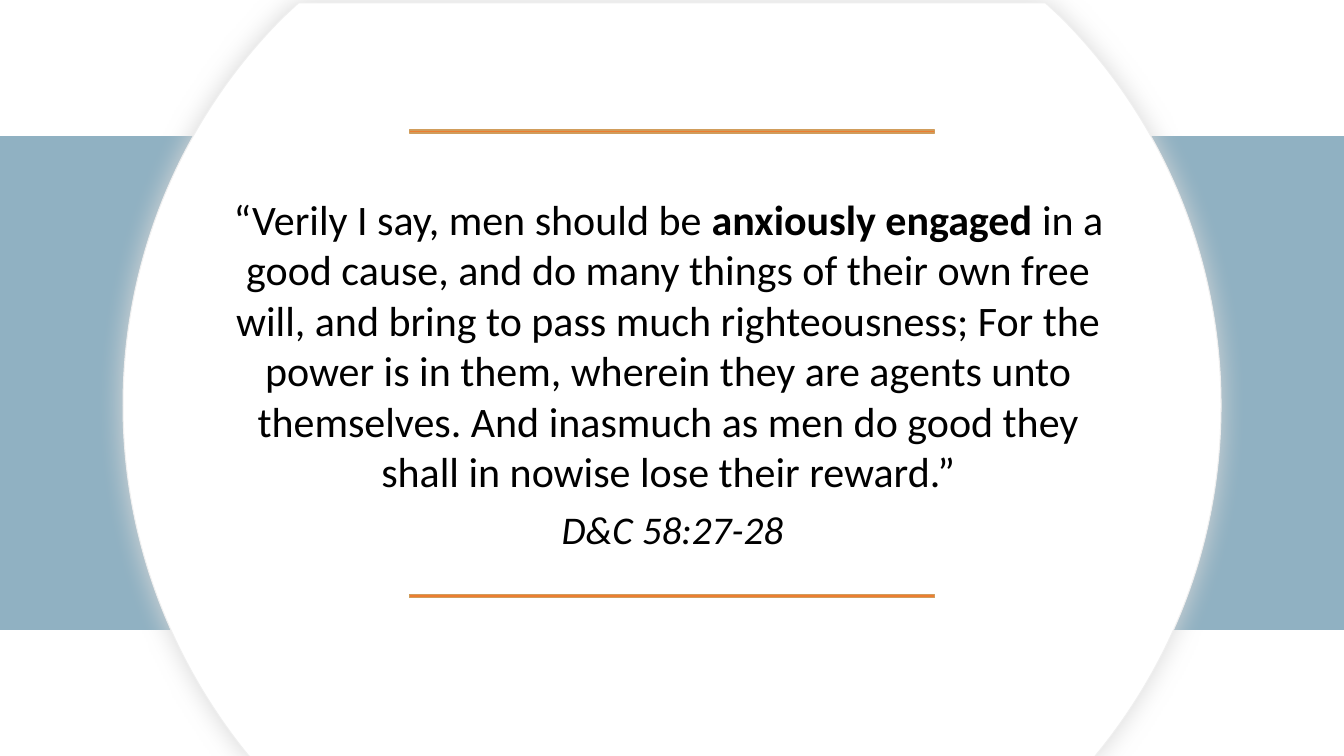
import pptx
import pptx.util
import pptx.dml.color
import pptx.enum.shapes
import pptx.enum.text
import pptx.oxml
import pptx.oxml.ns
import lxml.etree

Inches, Pt = pptx.util.Inches, pptx.util.Pt
RGBColor = pptx.dml.color.RGBColor
RECT = pptx.enum.shapes.MSO_SHAPE.RECTANGLE
qn = pptx.oxml.ns.qn

BLUE = RGBColor(0x90, 0xB1, 0xC2)
WHITE = RGBColor(0xFF, 0xFF, 0xFF)
PALE = RGBColor(0xEF, 0xEF, 0xEF)
ORANGE = RGBColor(0xED, 0x7D, 0x31)
TAN = RGBColor(0xD0, 0x9D, 0x5C)
BLACK = RGBColor(0, 0, 0)

QUOTE = [
    ("“Verily I say, men should be ", False, False),
    ("anxiously engaged ", True, False),
    ("in a good cause, and do many things of their own free will, and bring "
     "to pass much righteousness; For the power is in them, wherein they "
     "are agents unto themselves. And inasmuch as men do good they shall in "
     "nowise lose their reward.”", False, False),
]
CITATION = [("D&C 58:27-28", False, True)]

BAND = (0, 1.35, 13.33, 4.9)
RULE_TOPS = (1.29, 5.9)
DISC_START = (2.96, 0.03)
DISC = [
    [(10.37, 0.03)],
    [(10.52, 0.17)],
    [(11.5, 1.15), (12.11, 2.52), (12.11, 4.02)],
    [(12.11, 5.34), (11.65, 6.54), (10.87, 7.49)],
    [(10.84, 7.53)],
    [(2.5, 7.53)],
    [(2.46, 7.49)],
    [(1.69, 6.54), (1.22, 5.34), (1.22, 4.02)],
    [(1.22, 2.52), (1.83, 1.15), (2.81, 0.17)],
]
SHADOW = (
    '<a:effectLst xmlns:a="http://schemas.openxmlformats.org/drawingml/2006/main">'
    '<a:outerShdw blurRad="%d" dist="0" dir="0" algn="ctr" rotWithShape="0">'
    '<a:srgbClr val="D8D8D8"/></a:outerShdw></a:effectLst>' % Pt(18)
)


def paint(sp, fill, line):
    sp.shadow.inherit = False
    sp.fill.solid()
    sp.fill.fore_color.rgb = fill
    sp.line.color.rgb = line
    sp.line.width = Pt(0.75)


def add_bar(s, box, fill, line):
    paint(s.shapes.add_shape(RECT, *map(Inches, box)), fill, line)


def add_disc(s):
    fb = s.shapes.build_freeform(*map(Inches, DISC_START))
    fb.add_line_segments(
        [(Inches(x), Inches(y)) for seg in DISC for x, y in seg], close=True)
    sp = fb.convert_to_shape()
    paint(sp, WHITE, PALE)
    spPr = sp.element.spPr
    steps = iter(list(spPr.iter(qn("a:lnTo"))))
    for seg in DISC:
        first, *rest = [next(steps) for _ in seg]
        if rest:
            curve = lxml.etree.Element(qn("a:cubicBezTo"))
            first.addprevious(curve)
            for step in (first, *rest):
                curve.append(step[0])
                step.getparent().remove(step)
    spPr.replace(spPr.find(qn("a:effectLst")), pptx.oxml.parse_xml(SHADOW))


def write(sp, runs, size, inset_top):
    tf = sp.text_frame
    tf.word_wrap = True
    tf.auto_size = pptx.enum.text.MSO_AUTO_SIZE.NONE
    tf.vertical_anchor = pptx.enum.text.MSO_ANCHOR.TOP
    tf.margin_left = tf.margin_right = Inches(0.1)
    tf.margin_top, tf.margin_bottom = Inches(inset_top), Inches(0.05)
    p = tf.paragraphs[0]
    p.alignment = pptx.enum.text.PP_ALIGN.CENTER
    p.line_spacing = 1.0
    p.space_before = Pt(0)
    for text, bold, italic in runs:
        r = p.add_run()
        r.text = text
        r.font.name = "Calibri"
        r.font.size = Pt(size)
        r.font.bold = bold
        r.font.italic = italic
        r.font.color.rgb = BLACK


def main():
    prs = pptx.Presentation()
    prs.slide_width, prs.slide_height = Inches(13.33), Inches(7.5)
    s = prs.slides.add_slide(prs.slide_layouts[5])

    add_bar(s, BAND, BLUE, BLUE)
    add_disc(s)

    title = s.shapes.title
    title.left, title.top = Inches(2.03), Inches(1.83)
    title.width, title.height = Inches(9.2), Inches(4.1)
    s.shapes.element.append(title.element)
    write(title, QUOTE, 30, 0.09)

    for top in RULE_TOPS:
        add_bar(s, (4.06, top, 5.21, 0.03), ORANGE, TAN)

    citation = s.shapes.add_textbox(Inches(5.14), Inches(5.01), Inches(3.06), Inches(0.86))
    write(citation, CITATION, 28, 0)

    prs.save("out.pptx")


if __name__ == "__main__":
    main()
